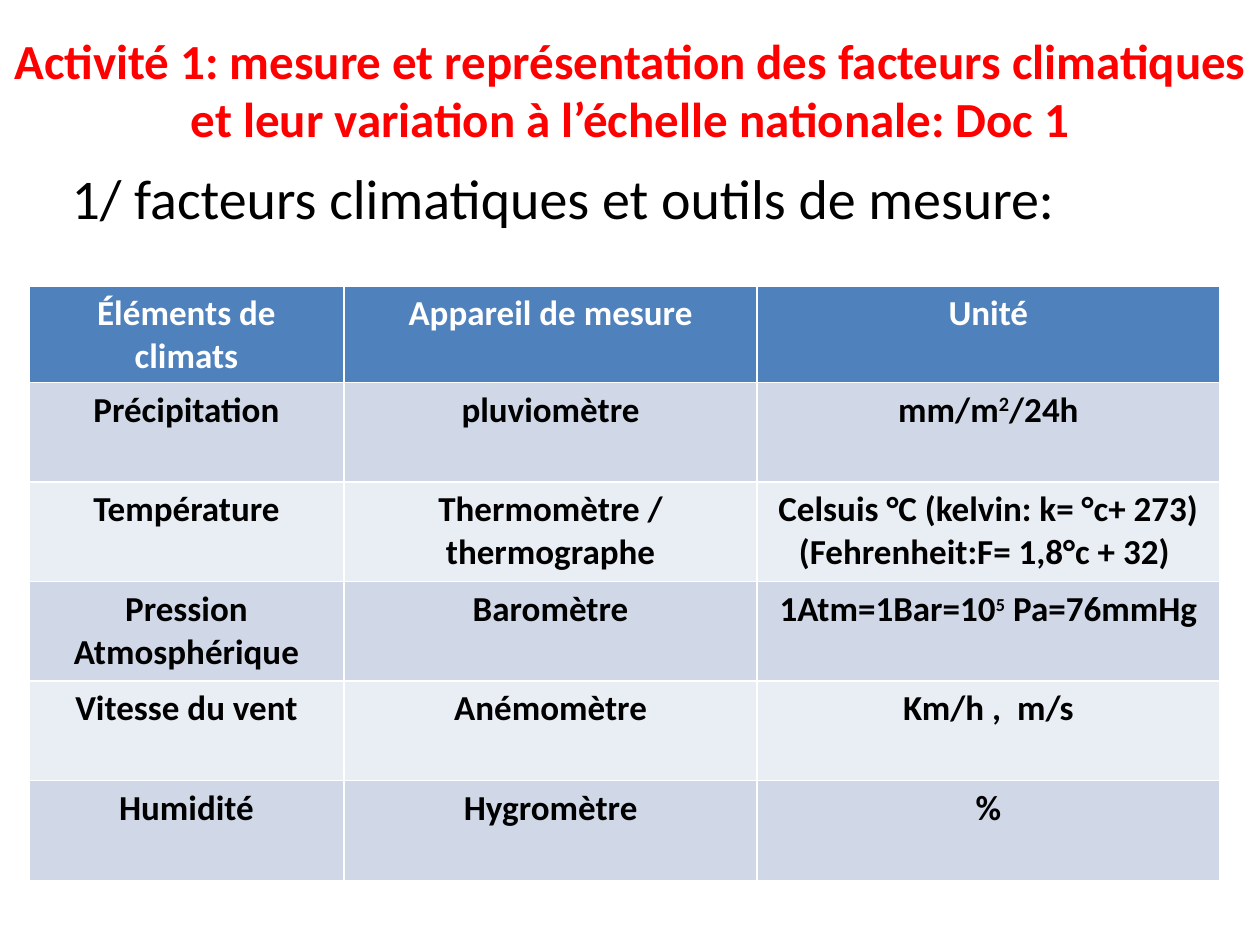
from pptx import Presentation
from pptx.dml.color import RGBColor as RGB
from pptx.enum.text import MSO_ANCHOR as Anchor, PP_ALIGN as Align
from pptx.util import Inches, Pt

COLORS = {
    "title": "FF0000",
    "text": "000000",
    "header_text": "FFFFFF",
    "header": "4F81BD",
    "odd_row": "D0D8E8",
    "even_row": "E9EDF4",
}
COLUMN_WIDTHS = [2.5, 3.28, 3.67]
ROW_HEIGHTS = [0.63] + [0.79] * 5
CLIMATE_ROWS = [
    ["Éléments de climats", "Appareil de mesure", "Unité"],
    ["Précipitation", "pluviomètre", [("mm/m", 20, 0), ("2", 20, 30), ("/24h", 20, 0)]],
    [
        "Température",
        "Thermomètre / thermographe",
        "Celsuis °C (kelvin: k= °c+ 273)\n(Fehrenheit:F= 1,8°c + 32) ",
    ],
    [
        "Pression Atmosphérique",
        "Baromètre",
        [("1Atm=1Bar=10", 20, 0), ("5", 18, 30), (" Pa=76mmHg", 20, 0)],
    ],
    ["Vitesse du vent", "Anémomètre", "Km/h ,  m/s"],
    ["Humidité", "Hygromètre", "%"],
]


class SlideBuilder:
    """Hold the text style and the current slide, and add its elements."""

    font_name = "Calibri"

    def __init__(self, slide):
        self.slide = slide

    def add_run(self, paragraph, text, size, color, bold, raised=0):
        run = paragraph.add_run()
        run.text = text
        values = {"name": self.font_name, "size": Pt(size), "bold": bold}
        for name, value in values.items():
            setattr(run.font, name, value)
        run.font.color.rgb = RGB.from_string(COLORS[color])
        if raised:
            run._r.get_or_add_rPr().set("baseline", str(raised * 1000))

    def add_text(self, box, text, size, color, bold, anchor, **layout):
        shape = self.slide.shapes.add_textbox(*map(Inches, box))
        frame = shape.text_frame
        frame.word_wrap = True
        frame.vertical_anchor = anchor
        paragraph = frame.paragraphs[0]
        for name, value in layout.items():
            setattr(paragraph, name, value)
        self.add_run(paragraph, text, size, color, bold)

    def fill_cell(self, cell, content, fill, color):
        cell.fill.solid()
        cell.fill.fore_color.rgb = RGB.from_string(COLORS[fill])
        if isinstance(content, str):
            lines = [[(line, 20, 0)] for line in content.split("\n")]
        else:
            lines = [content]
        frame = cell.text_frame
        for index, line in enumerate(lines):
            paragraph = frame.add_paragraph() if index else frame.paragraphs[0]
            paragraph.alignment = Align.CENTER
            for text, size, raised in line:
                self.add_run(paragraph, text, size, color, True, raised)

    def add_table(self, left, top, widths, heights, rows):
        box = map(Inches, (left, top, sum(widths), sum(heights)))
        table = self.slide.shapes.add_table(len(rows), len(widths), *box).table
        for column, width in zip(table.columns, widths):
            column.width = Inches(width)
        for index, (row, height, contents) in enumerate(zip(table.rows, heights, rows)):
            row.height = Inches(height)
            band = "odd_row" if index % 2 else "even_row"
            fill, color = (band, "text") if index else ("header", "header_text")
            for cell, content in zip(row.cells, contents):
                self.fill_cell(cell, content, fill, color)


def main():
    presentation = Presentation()
    presentation.slide_width = Inches(10)
    presentation.slide_height = Inches(7.5)
    builder = SlideBuilder(presentation.slides.add_slide(presentation.slide_layouts[6]))
    builder.add_text(
        (0, 0.08, 10, 1.25),
        "Activité 1: mesure et représentation des facteurs climatiques "
        "et leur variation à l’échelle nationale: Doc 1",
        28, "title", True, Anchor.MIDDLE, alignment=Align.CENTER,
    )
    builder.add_text(
        (0.47, 1.25, 9, 0.7),
        "1/ facteurs climatiques et outils de mesure:",
        32, "text", False, Anchor.TOP, space_before=Pt(6.4),
    )
    builder.add_table(0.23, 2.27, COLUMN_WIDTHS, ROW_HEIGHTS, CLIMATE_ROWS)
    presentation.save("out.pptx")


if __name__ == "__main__":
    main()
